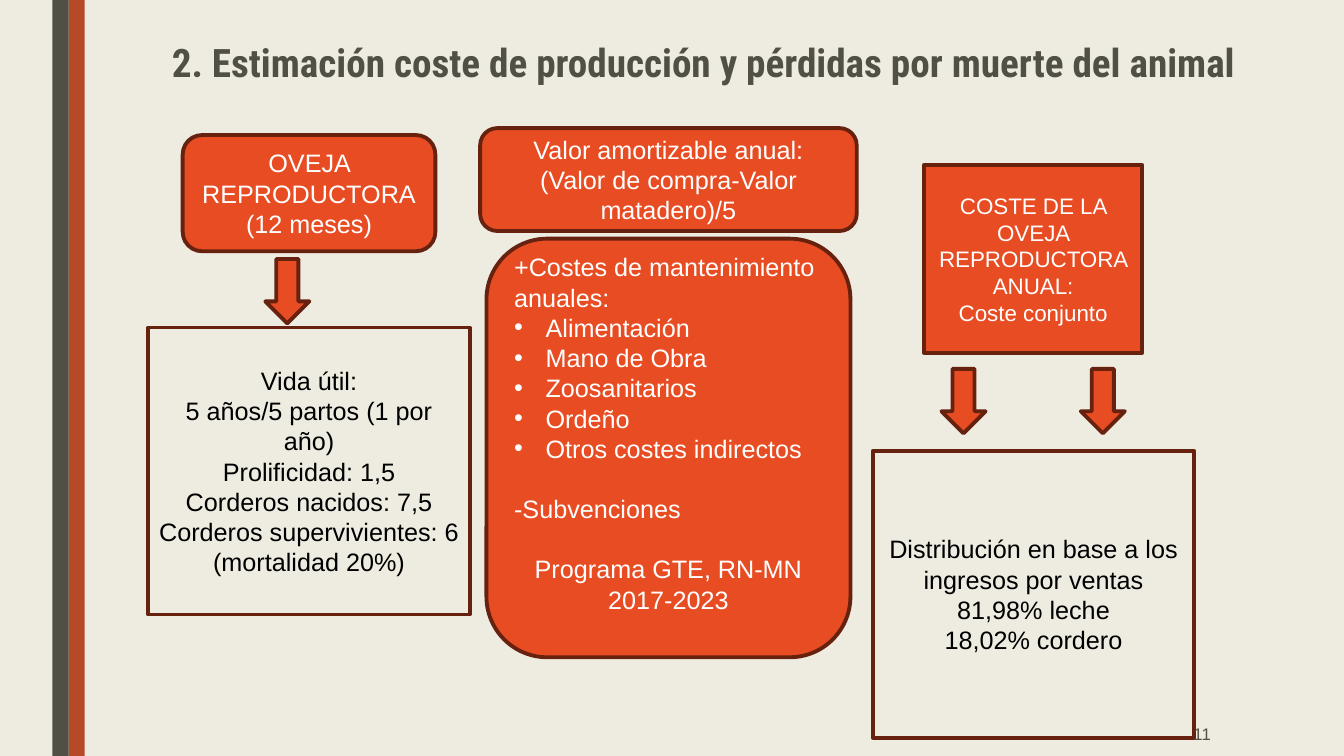
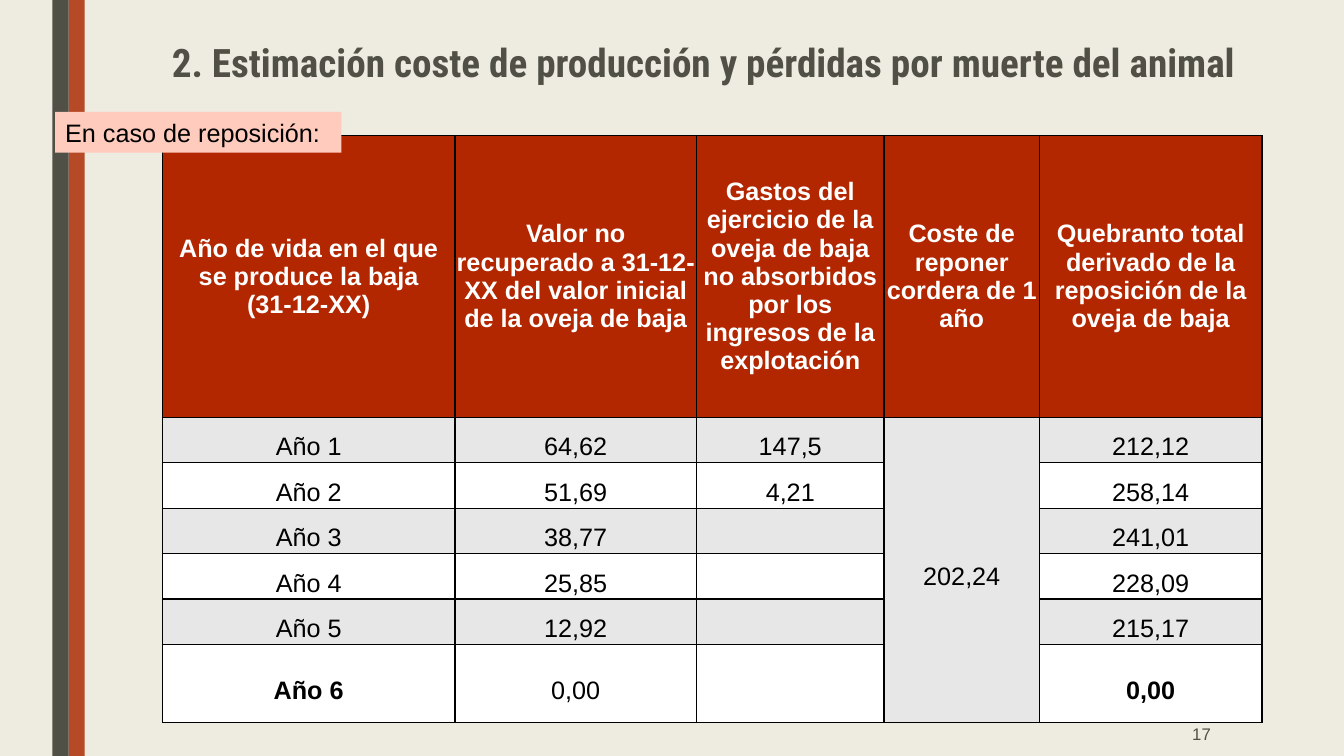
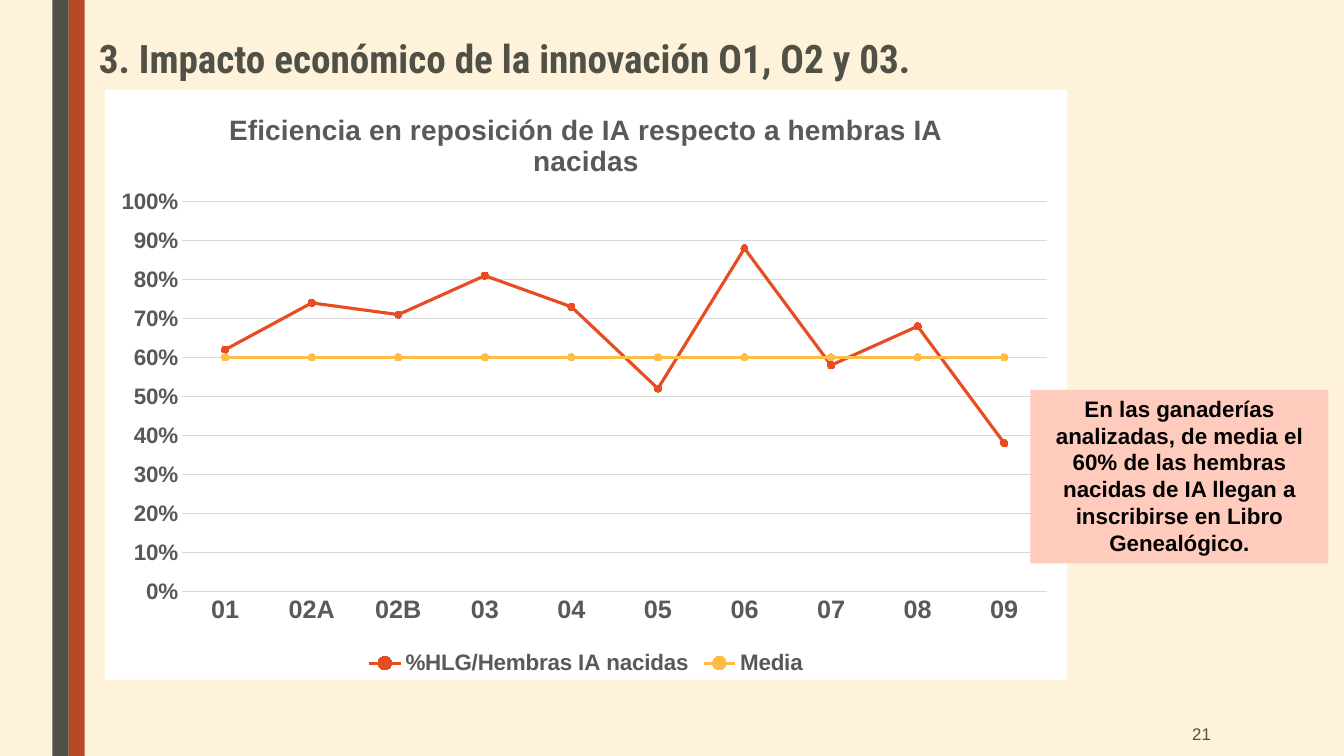
import pptx
import pptx.chart.data
import pptx.dml.color
import pptx.enum.chart
import pptx.enum.shapes
import pptx.enum.text
import pptx.oxml
import pptx.oxml.ns
import pptx.util
from lxml import etree

Pt = pptx.util.Pt
RGBColor = pptx.dml.color.RGBColor
SHAPE = pptx.enum.shapes.MSO_SHAPE
ALIGN = pptx.enum.text.PP_ALIGN
ANCHOR = pptx.enum.text.MSO_ANCHOR
qn = pptx.oxml.ns.qn

# Shared look
CREAM = RGBColor(0xEE, 0xEC, 0xE1)
WARM_CREAM = RGBColor(0xFF, 0xF2, 0xDA)
OLIVE = RGBColor(0x50, 0x50, 0x46)
RUST = RGBColor(0xB6, 0x49, 0x26)
ORANGE = RGBColor(0xE8, 0x4C, 0x22)
BROWN = RGBColor(0x66, 0x21, 0x0F)
YELLOW = RGBColor(0xFF, 0xBD, 0x47)
PINK = RGBColor(0xFF, 0xCB, 0xBD)
HEADER_RED = RGBColor(0xB2, 0x26, 0x00)
STRIPE = RGBColor(0xE7, 0xE7, 0xE7)
GRID = RGBColor(0xD9, 0xD9, 0xD9)
CHART_GREY = RGBColor(0x59, 0x59, 0x59)
WHITE = RGBColor(0xFF, 0xFF, 0xFF)
BLACK = RGBColor(0x00, 0x00, 0x00)
BODY_FONT = "Arial"
TITLE_FONT = "Roboto Condensed"
COST_TITLE = "2. Estimación coste de producción y pérdidas por muerte del animal"


def set_font(font, size, color, bold=False, name=BODY_FONT):
    font.size, font.bold, font.name = Pt(size), bold, name
    font.color.rgb = color


def write(tf, lines, size, color, align=ALIGN.CENTER, bold=False,
          name=BODY_FONT, spacing=None):
    tf.word_wrap = True
    tf.text = "\n".join(lines)
    for p in tf.paragraphs:
        p.alignment = align
        if spacing:
            p.line_spacing = spacing
        for r in p.runs:
            set_font(r.font, size, color, bold, name)


def add_text(slide, box, text, size, color, anchor=ANCHOR.TOP, fill=None, **style):
    sp = slide.shapes.add_textbox(*map(Pt, box))
    if fill is not None:
        sp.fill.solid()
        sp.fill.fore_color.rgb = fill
    sp.text_frame.vertical_anchor = anchor
    write(sp.text_frame, [text], size, color, **style)


def add_shape(slide, kind, box, fill, line=BROWN):
    sp = slide.shapes.add_shape(kind, *map(Pt, box))
    sp.shadow.inherit = False
    sp.fill.solid()
    sp.fill.fore_color.rgb = fill
    if line is None:
        sp.line.fill.background()
    else:
        sp.line.color.rgb = line
        sp.line.width = Pt(2.75)
    return sp


def add_box(slide, kind, box, lines, fill=ORANGE, color=WHITE, size=18):
    sp = add_shape(slide, kind, box, fill)
    sp.text_frame.vertical_anchor = ANCHOR.MIDDLE
    write(sp.text_frame, lines, size, color)
    return sp


def add_bullet(p):
    pPr = p._p.get_or_add_pPr()
    pPr.set("marL", str(Pt(22.5)))
    pPr.set("indent", str(-Pt(22.5)))
    etree.SubElement(pPr, qn("a:buFont")).set("typeface", BODY_FONT)
    etree.SubElement(pPr, qn("a:buChar")).set("char", "•")


def add_slide(prs, title, number, background=CREAM, title_box=(62, 28, 880.5, 45),
              title_align=ALIGN.CENTER):
    s = prs.slides.add_slide(prs.slide_layouts[6])
    s.background.fill.solid()
    s.background.fill.fore_color.rgb = background
    for left, color in ((49, RUST), (37.5, OLIVE)):
        add_shape(s, SHAPE.RECTANGLE, (left, 0, 11.5, 540), color, None)
    add_text(s, title_box, title, 28, OLIVE, align=title_align, bold=True,
             name=TITLE_FONT, spacing=0.89)
    return s


def add_number(slide, number):
    add_text(slide, (746, 508.5, 126, 31.5), str(number), 12, OLIVE,
             anchor=ANCHOR.MIDDLE, align=ALIGN.RIGHT)


def fill_cell(cell, lines, fill, color=BLACK, bold=False, spacing=1.5):
    cell.fill.solid()
    cell.fill.fore_color.rgb = fill
    cell.vertical_anchor = ANCHOR.MIDDLE
    cell.margin_left = cell.margin_right = cell.margin_top = cell.margin_bottom = 0
    write(cell.text_frame, lines, 18, color, bold=bold, spacing=spacing)
    # Borders come before the fill in the cell properties
    tcPr = cell._tc.get_or_add_tcPr()
    for i, side in enumerate(("lnL", "lnR", "lnT", "lnB")):
        ln = etree.Element(qn("a:" + side), w=str(Pt(1)))
        solid = etree.SubElement(ln, qn("a:solidFill"))
        etree.SubElement(solid, qn("a:srgbClr")).set("val", str(BLACK))
        tcPr.insert(i, ln)


def production_slide(prs):
    s = add_slide(prs, COST_TITLE, 11)

    # Ewe and its useful life
    add_box(s, SHAPE.ROUNDED_RECTANGLE, (130.5, 96.5, 180.5, 83),
            ["OVEJA REPRODUCTORA", "(12 meses)"])
    add_box(s, SHAPE.RECTANGLE, (106, 234, 229.5, 205),
            ["Vida útil:", "5 años/5 partos (1 por año)", "Prolificidad: 1,5",
             "Corderos nacidos: 7,5", "Corderos supervivientes: 6 (mortalidad 20%)"],
            CREAM, BLACK)

    # Yearly costs
    add_box(s, SHAPE.ROUNDED_RECTANGLE, (343, 91.5, 269, 73.5),
            ["Valor amortizable anual:", "(Valor de compra-Valor matadero)/5"])
    costs = add_box(s, SHAPE.ROUNDED_RECTANGLE, (347.5, 170.5, 260, 299),
                    ["+Costes de mantenimiento anuales:", "Alimentación",
                     "Mano de Obra", "Zoosanitarios", "Ordeño",
                     "Otros costes indirectos", "-Subvenciones",
                     "Programa GTE, RN-MN", "2017-2023"])
    costs.text_frame.margin_bottom = Pt(25)
    ps = costs.text_frame.paragraphs
    for p in ps[:7]:
        p.alignment = ALIGN.LEFT
    for p in ps[6:8]:
        p.space_before = Pt(21.5)
    for p in ps[1:6]:
        add_bullet(p)

    # Joint cost and how it is shared out
    add_box(s, SHAPE.RECTANGLE, (660, 118, 156, 134),
            ["COSTE DE LA OVEJA REPRODUCTORA ANUAL:", "Coste conjunto"], size=16)
    add_box(s, SHAPE.RECTANGLE, (623.5, 322, 229.5, 205),
            ["Distribución en base a los ingresos por ventas",
             "81,98% leche", "18,02% cordero"], CREAM, BLACK)

    for left, top in ((189.5, 185), (672.5, 263.5), (772, 263.5)):
        add_shape(s, SHAPE.DOWN_ARROW, (left, top, 31.5, 46), ORANGE)
    add_number(s, 11)


def replacement_slide(prs):
    s = add_slide(prs, COST_TITLE, 17)
    headers = [
        ["Año de vida en el que se produce la baja", "(31-12-XX)"],
        ["Valor no recuperado a 31-12-XX del valor inicial de la oveja de baja"],
        ["Gastos del ejercicio de la oveja de baja no absorbidos por los "
         "ingresos de la explotación"],
        ["Coste de reponer cordera de 1 año"],
        ["Quebranto total derivado de la reposición de la oveja de baja"],
    ]
    rows = [
        ("Año 1", "64,62", "147,5", "202,24", "212,12"),
        ("Año 2", "51,69", "4,21", "", "258,14"),
        ("Año 3", "38,77", "", "", "241,01"),
        ("Año 4", "25,85", "", "", "228,09"),
        ("Año 5", "12,92", "", "", "215,17"),
        ("Año 6", "0,00", "", "", "0,00"),
    ]
    widths = (209, 172.5, 134, 111, 159)
    heights = [201] + [32.5] * 5 + [55.5]
    table = s.shapes.add_table(len(heights), len(widths), Pt(116), Pt(97),
                               Pt(sum(widths)), Pt(sum(heights))).table
    for col, width in zip(table.columns, widths):
        col.width = Pt(width)
    for row, height in zip(table.rows, heights):
        row.height = Pt(height)
    for c, lines in enumerate(headers):
        fill_cell(table.cell(0, c), lines, HEADER_RED, WHITE, True, 1.0)
    for r, values in enumerate(rows, 1):
        for c, value in enumerate(values):
            fill_cell(table.cell(r, c), [value], STRIPE if r % 2 else WHITE,
                      bold=r == len(rows) and c in (0, 4))
    table.cell(1, 3).merge(table.cell(len(rows), 3))

    add_text(s, (39.5, 80, 204.5, 29), "En caso de reposición:", 18, BLACK,
             fill=PINK, align=ALIGN.LEFT)
    add_number(s, 17)


def set_plot_area(chart, **fractions):
    plot_area = chart._chartSpace.chart.plotArea
    layout = plot_area.find(qn("c:layout"))
    if layout is None:
        layout = etree.Element(qn("c:layout"))
        plot_area.insert(0, layout)
    manual = etree.SubElement(layout, qn("c:manualLayout"))
    settings = {"layoutTarget": "inner", "xMode": "edge", "yMode": "edge", **fractions}
    for tag, value in settings.items():
        etree.SubElement(manual, qn("c:" + tag)).set("val", str(value))


def fill_chart_background(chart, color):
    spPr = etree.Element(qn("c:spPr"))
    solid = etree.SubElement(spPr, qn("a:solidFill"))
    etree.SubElement(solid, qn("a:srgbClr")).set("val", str(color))
    etree.SubElement(etree.SubElement(spPr, qn("a:ln")), qn("a:noFill"))
    chart._chartSpace.chart.addnext(spPr)


def add_line_chart(slide, box, title, categories, series):
    data = pptx.chart.data.CategoryChartData(number_format="0%")
    data.categories = categories
    for name, values, color in series:
        data.add_series(name, values)
    chart = slide.shapes.add_chart(pptx.enum.chart.XL_CHART_TYPE.LINE_MARKERS,
                                   *map(Pt, box), data).chart
    set_font(chart.font, 10, BLACK)
    fill_chart_background(chart, WHITE)
    set_plot_area(chart, x=0.08, y=0.19, w=0.9, h=0.66)

    # Title and legend
    chart.has_title = True
    write(chart.chart_title.text_frame, [title], 20, CHART_GREY, bold=True)
    chart.chart_title.include_in_layout = False
    chart.has_legend = True
    chart.legend.position = pptx.enum.chart.XL_LEGEND_POSITION.BOTTOM
    chart.legend.include_in_layout = False
    set_font(chart.legend.font, 16, CHART_GREY, True)

    # Axes
    cat, val = chart.category_axis, chart.value_axis
    for axis, size in ((cat, 18), (val, 16)):
        axis.major_tick_mark = axis.minor_tick_mark = pptx.enum.chart.XL_TICK_MARK.NONE
        set_font(axis.tick_labels.font, size, CHART_GREY, True)
    val.minimum_scale, val.maximum_scale, val.major_unit = 0, 1, 0.1
    val.tick_labels.number_format = "0%"
    val.tick_labels.number_format_is_linked = False
    val.format.line.fill.background()
    for line in (cat.format.line, val.major_gridlines.format.line):
        line.color.rgb = GRID
        line.width = Pt(0.75)

    # Series
    for ser, (name, values, color) in zip(chart.plots[0].series, series):
        ser.smooth = False
        ser.format.line.color.rgb = color
        ser.format.line.width = Pt(2.25)
        ser.marker.style = pptx.enum.chart.XL_MARKER_STYLE.CIRCLE
        ser.marker.size = 5
        ser.marker.format.fill.solid()
        ser.marker.format.fill.fore_color.rgb = color
        ser.marker.format.line.color.rgb = color


def impact_slide(prs):
    s = add_slide(prs, "3. Impacto económico de la innovación O1, O2 y 03.", 21,
                  WARM_CREAM, (63.5, 25, 834, 43), ALIGN.LEFT)
    add_line_chart(
        s, (75, 64, 687, 421.5),
        "Eficiencia en reposición de IA respecto a hembras IA nacidas",
        ["01", "02A", "02B", "03", "04", "05", "06", "07", "08", "09"],
        [("%HLG/Hembras IA nacidas",
          (0.62, 0.74, 0.71, 0.81, 0.73, 0.52, 0.88, 0.58, 0.68, 0.38), ORANGE),
         ("Media", (0.6,) * 10, YELLOW)])
    add_text(s, (736, 278.5, 213, 124),
             "En las ganaderías analizadas, de media el 60% de las hembras nacidas "
             "de IA llegan a inscribirse en Libro Genealógico.",
             16, BLACK, fill=PINK, bold=True)
    add_number(s, 21)


def main():
    prs = pptx.Presentation()
    prs.slide_width, prs.slide_height = Pt(960), Pt(540)
    production_slide(prs)
    replacement_slide(prs)
    impact_slide(prs)
    prs.save("out.pptx")


if __name__ == "__main__":
    main()
